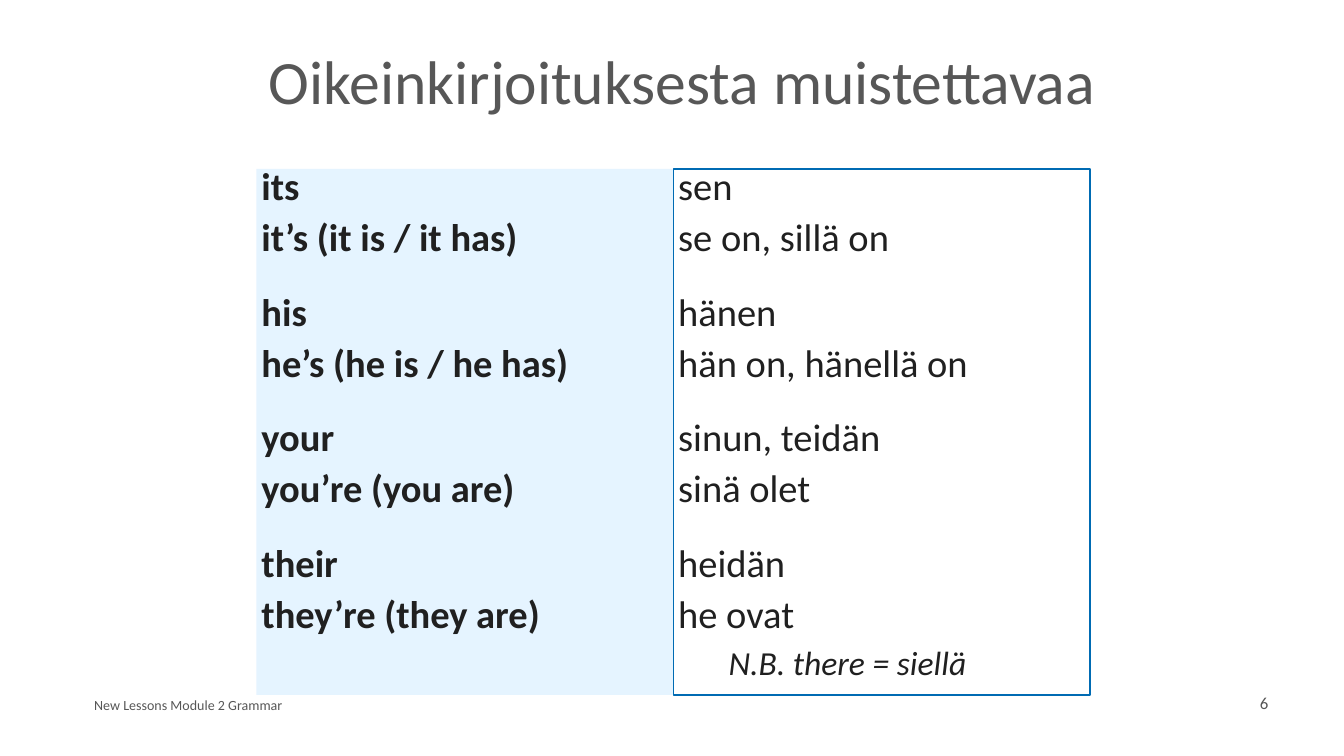
import dataclasses

import pptx
import pptx.dml.color
import pptx.enum.shapes
import pptx.enum.text
import pptx.util

Inches = pptx.util.Inches
Pt = pptx.util.Pt
Align = pptx.enum.text.PP_ALIGN
Anchor = pptx.enum.text.MSO_ANCHOR


@dataclasses.dataclass(frozen=True)
class Theme:
    font: str = "Calibri"
    grey: str = "575757"
    ink: str = "202020"
    pale_blue: str = "E5F4FF"
    blue: str = "006BB3"
    title_size: int = 88
    body_size: int = 55
    note_size: int = 48
    number_size: int = 24
    footer_size: int = 20
    line_gap: int = 20
    group_gap: float = 53.7


def rgb(value):
    return pptx.dml.color.RGBColor.from_string(value)


class SlideBuilder:
    def __init__(self, slide, theme):
        self.slide = slide
        self.theme = theme

    def style(self, para, size, color, bold=False, italic=False):
        font = para.font
        font.name = self.theme.font
        font.size = Pt(size)
        font.bold = bold
        font.italic = italic
        font.color.rgb = rgb(color)

    def label(self, text, area, size, align, anchor, spacing=1.0):
        box = self.slide.shapes.add_textbox(*map(Inches, area))
        frame = box.text_frame
        frame.word_wrap = True
        frame.vertical_anchor = anchor
        para = frame.paragraphs[0]
        para.text = text
        para.alignment = align
        para.line_spacing = spacing
        self.style(para, size, self.theme.grey)

    def word_column(self, groups, area, fill=None, line=None, bold=False, note=None):
        box = self.slide.shapes.add_shape(
            pptx.enum.shapes.MSO_SHAPE.RECTANGLE, *map(Inches, area)
        )
        box.shadow.inherit = False
        if fill:
            box.fill.solid()
            box.fill.fore_color.rgb = rgb(fill)
        else:
            box.fill.background()
        if line:
            box.line.color.rgb = rgb(line)
            box.line.width = Pt(2)
        else:
            box.line.fill.background()

        frame = box.text_frame
        frame.word_wrap = True
        frame.vertical_anchor = Anchor.TOP
        for group_index, group in enumerate(groups):
            for word_index, text in enumerate(group):
                first = group_index == word_index == 0
                para = frame.paragraphs[0] if first else frame.add_paragraph()
                gap = self.theme.line_gap if word_index else self.theme.group_gap
                self.word_line(para, text, 0 if first else gap)
                self.style(para, self.theme.body_size, self.theme.ink, bold)
        if note:
            para = frame.add_paragraph()
            self.word_line(para, note, self.theme.line_gap)
            para._p.get_or_add_pPr().set("marL", str(Inches(1)))
            self.style(para, self.theme.note_size, self.theme.ink, italic=True)

    def word_line(self, para, text, gap):
        para.text = text
        para.alignment = Align.LEFT
        para.line_spacing = 0.8
        para.space_before = Pt(gap)


ENGLISH = [
    ("its", "it’s (it is / it has)"),
    ("his", "he’s (he is / he has)"),
    ("your", "you’re (you are)"),
    ("their", "they’re (they are)"),
]
FINNISH = [
    ("sen", "se on, sillä on"),
    ("hänen", "hän on, hänellä on"),
    ("sinun, teidän", "sinä olet"),
    ("heidän", "he ovat"),
]


def main():
    deck = pptx.Presentation()
    deck.slide_width = Inches(26.67)
    deck.slide_height = Inches(15)
    theme = Theme()
    builder = SlideBuilder(deck.slides.add_slide(deck.slide_layouts[6]), theme)

    builder.label("Oikeinkirjoituksesta muistettavaa", (1.8, 0.8, 23.47, 1.77),
                  theme.title_size, Align.CENTER, Anchor.MIDDLE, 0.9)

    left, top, width, height = 5.09, 3.35, 8.27, 10.44
    builder.word_column(ENGLISH, (left, top, width, height),
                        fill=theme.pale_blue, bold=True)
    builder.word_column(FINNISH, (left + width, top, width, height),
                        line=theme.blue, note="N.B. there = siellä")

    builder.label("New Lessons Module 2 Grammar", (1.77, 13.4, 9, 0.8),
                  theme.footer_size, Align.LEFT, Anchor.BOTTOM)
    builder.label("6", (19.27, 13.4, 6, 0.8),
                  theme.number_size, Align.RIGHT, Anchor.BOTTOM)

    deck.save("out.pptx")


if __name__ == "__main__":
    main()
